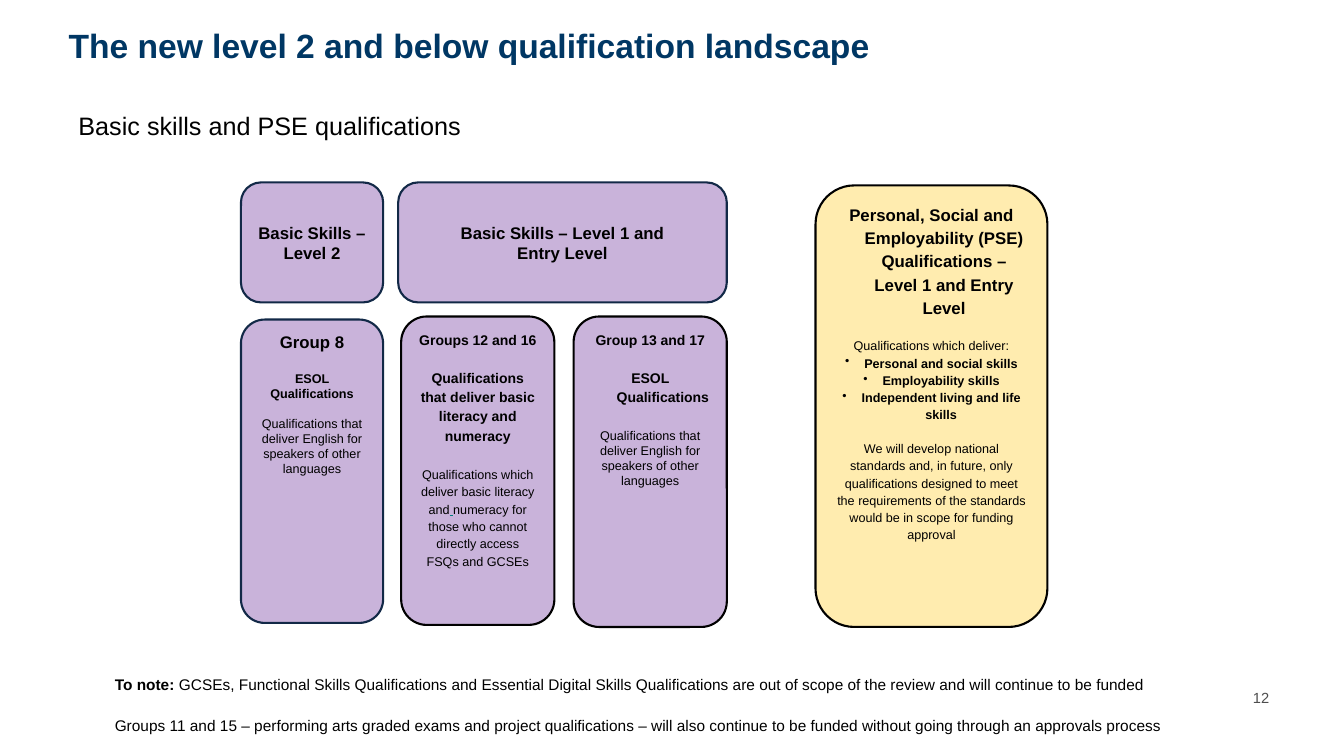
from lxml.etree import SubElement
from pptx import Presentation
from pptx.dml.color import RGBColor
from pptx.enum.shapes import MSO_SHAPE
from pptx.enum.text import MSO_ANCHOR, MSO_AUTO_SIZE, PP_ALIGN
from pptx.oxml.ns import qn
from pptx.util import Inches, Pt

BLACK = RGBColor(0x00, 0x00, 0x00)
NAVY = RGBColor(0x00, 0x37, 0x64)
INK = RGBColor(0x12, 0x29, 0x47)
GREY = RGBColor(0x4D, 0x4D, 0x4D)
TEAL = RGBColor(0x00, 0x80, 0x80)
LILAC = RGBColor(0xC9, 0xB3, 0xDA)
CREAM = RGBColor(0xFF, 0xEC, 0xAF)


def line(words, size, bold=False, gap=0, spacing=None, hang=0, bullet=None):
    runs = [(words, {})] if isinstance(words, str) else words
    return {"runs": runs, "font": {"size": Pt(size), "bold": bold},
            "layout": {"space_before": Pt(gap), "line_spacing": spacing},
            "hang": hang, "bullet": bullet}


def hung(words, size, bold=False, gap=0):
    return line(words, size, bold, gap, spacing=1.15, hang=0.25)


class LandscapeSlide:
    """Draws slide elements in one style, placed in percent of the slide's width and height."""

    font_name = "Arial"
    outline = Pt(1.5)

    def __init__(self, deck):
        self.column = deck.slide_width / 100
        self.row = deck.slide_height / 100
        self.slide = deck.slides.add_slide(deck.slide_layouts[5])

    def area(self, left, top, width, height):
        return (round(left * self.column), round(top * self.row),
                round(width * self.column), round(height * self.row))

    def fill_in(self, frame, lines, align, color=BLACK):
        for index, content in enumerate(lines):
            paragraph = frame.add_paragraph() if index else frame.paragraphs[0]
            for key, value in {**content["layout"], "alignment": align}.items():
                setattr(paragraph, key, value)
            for words, changes in content["runs"]:
                run = paragraph.add_run()
                run.text = words
                formats = {"name": self.font_name, **content["font"], **changes}
                run.font.color.rgb = formats.pop("color", color)
                for key, value in formats.items():
                    setattr(run.font, key, value)
            properties = paragraph._p.get_or_add_pPr()
            if content["hang"]:
                properties.set("marL", str(Inches(content["hang"])))
                properties.set("indent", str(-Inches(content["hang"])))
            if content["bullet"]:
                SubElement(properties, qn("a:buChar")).set("char", content["bullet"])

    def title(self, area, heading):
        holder = self.slide.shapes.title
        for key, value in zip(("left", "top", "width", "height"), self.area(*area)):
            setattr(holder, key, value)
        frame = holder.text_frame
        formats = {"margin_left": 0, "margin_top": 0, "margin_right": 0, "margin_bottom": 0,
                   "vertical_anchor": MSO_ANCHOR.TOP, "word_wrap": True,
                   "auto_size": MSO_AUTO_SIZE.NONE}
        for key, value in formats.items():
            setattr(frame, key, value)
        self.fill_in(frame, [heading], PP_ALIGN.LEFT, NAVY)

    def text(self, area, lines, align=PP_ALIGN.LEFT, color=BLACK, grow=MSO_AUTO_SIZE.SHAPE_TO_FIT_TEXT):
        frame = self.slide.shapes.add_textbox(*self.area(*area)).text_frame
        for key, value in {"word_wrap": True, "auto_size": grow}.items():
            setattr(frame, key, value)
        self.fill_in(frame, lines, align, color)

    def card(self, area, lines, fill=LILAC, edge=BLACK, anchor=MSO_ANCHOR.TOP):
        card = self.slide.shapes.add_shape(MSO_SHAPE.ROUNDED_RECTANGLE, *self.area(*area))
        card.shadow.inherit = False
        card.fill.solid()
        card.fill.fore_color.rgb = fill
        card.line.color.rgb = edge
        card.line.width = self.outline
        card.text_frame.vertical_anchor = anchor
        card.text_frame.word_wrap = True
        self.fill_in(card.text_frame, lines, PP_ALIGN.CENTER)


def main():
    deck = Presentation()
    deck.slide_width, deck.slide_height = Inches(13.33), Inches(7.5)
    page = LandscapeSlide(deck)

    page.text((89.03, 90.4, 6.15, 5.33), [line("12", 10.5)], PP_ALIGN.RIGHT, GREY, MSO_AUTO_SIZE.NONE)
    page.text((5.1, 13.87, 67.5, 5.33), [line("Basic skills and PSE qualifications", 18)])
    page.title((5.1, 3.87, 89.85, 7.47),
               line("The new level 2 and below qualification landscape", 24, True, spacing=0.9))

    headings = [
        (17.93, 10.58, ["Basic Skills – Level 2"]),
        (29.63, 24.45, ["Basic Skills – Level 1 and", "Entry Level"]),
    ]
    for left, width, words in headings:
        page.card((left, 24.13, width, 15.87), [line(part, 12, True) for part in words],
                  edge=INK, anchor=MSO_ANCHOR.MIDDLE)

    esol = "Qualifications that deliver English for speakers of other languages"
    page.card((17.93, 42.27, 10.58, 40.13), [
        line("Group 8", 12, True),
        line("ESOL Qualifications", 9, True, gap=13.8),
        line(esol, 9, gap=10.35),
    ], edge=INK)

    aims = ["that deliver basic", "literacy and", "numeracy"]
    learners = [
        "deliver basic literacy",
        [("and", {}), (" ", {"color": TEAL, "underline": True}), ("numeracy for", {})],
        "those who cannot", "directly access", "FSQs and GCSEs",
    ]
    page.card((29.85, 41.87, 11.4, 40.8), [
        hung("Groups 12 and 16", 10, True),
        hung("Qualifications", 10, True, gap=13.2),
        *[hung(words, 10, True) for words in aims],
        hung("Qualifications which", 9, gap=14.5),
        *[hung(words, 9) for words in learners],
    ])

    page.card((42.68, 41.87, 11.4, 41.07), [
        hung("Group 13 and 17", 10, True),
        hung("ESOL Qualifications", 10, True, gap=13.2),
        line(esol, 9, gap=15.9),
    ])

    skills = ["Personal and social skills", "Employability skills", "Independent living and life skills"]
    page.card((60.68, 24.53, 17.25, 58.4), [
        hung("Personal, Social and Employability (PSE) Qualifications – Level 1 and Entry Level", 12, True),
        line("Qualifications which deliver:", 9, gap=13.2, spacing=1.14),
        *[line(skill, 9, True, spacing=1.14, hang=0.19, bullet="•") for skill in skills],
        line("We will develop national standards and, in future, only qualifications designed to meet "
             "the requirements of the standards would be in scope for funding approval",
             9, gap=11.8, spacing=1.14),
    ], fill=CREAM)

    page.text((7.8, 88.27, 85.88, 9.6), [
        line([("To note: ", {"bold": True}),
              ("GCSEs, Functional Skills Qualifications and Essential Digital Skills Qualifications "
               "are out of scope of the review and will continue to be funded", {})], 11, spacing=1.14),
        line("Groups 11 and 15 – performing arts graded exams and project qualifications – "
             "will also continue to be funded without going through an approvals process",
             11, gap=14.4, spacing=1.14),
    ])
    deck.save("out.pptx")


if __name__ == "__main__":
    main()
